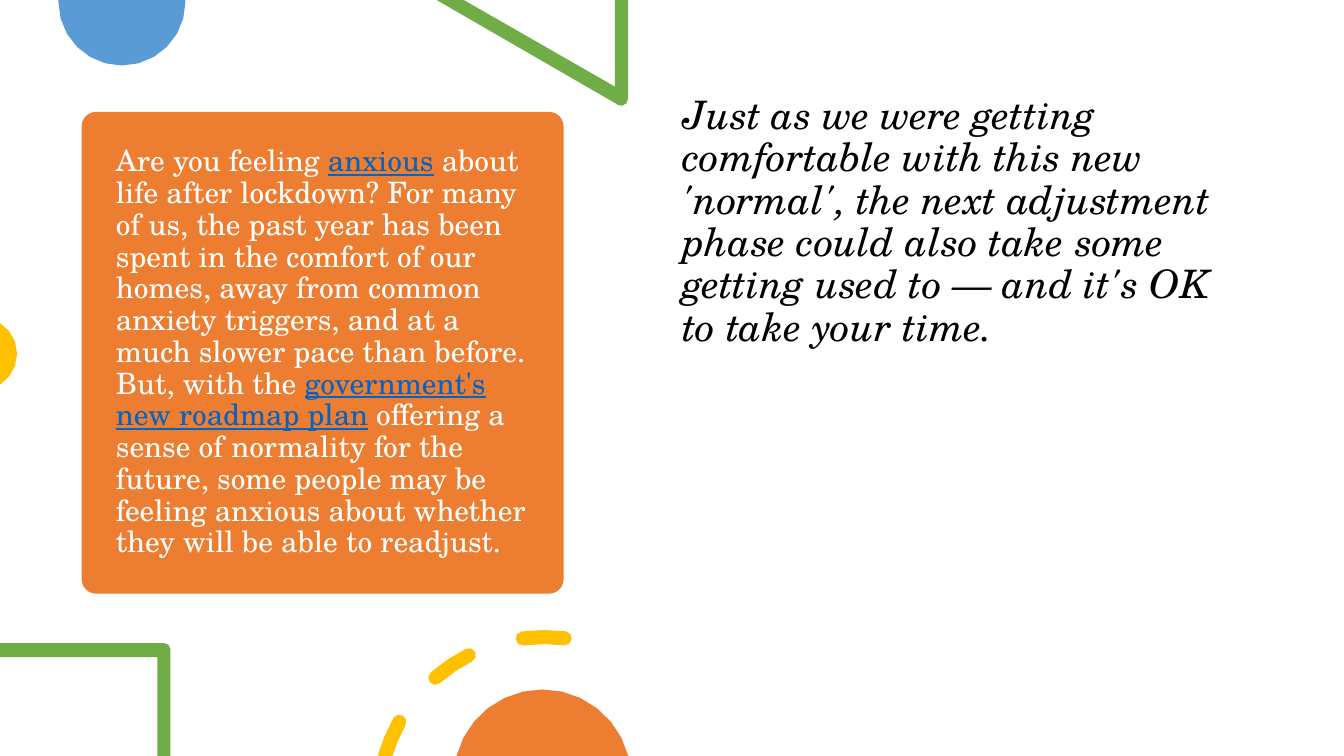
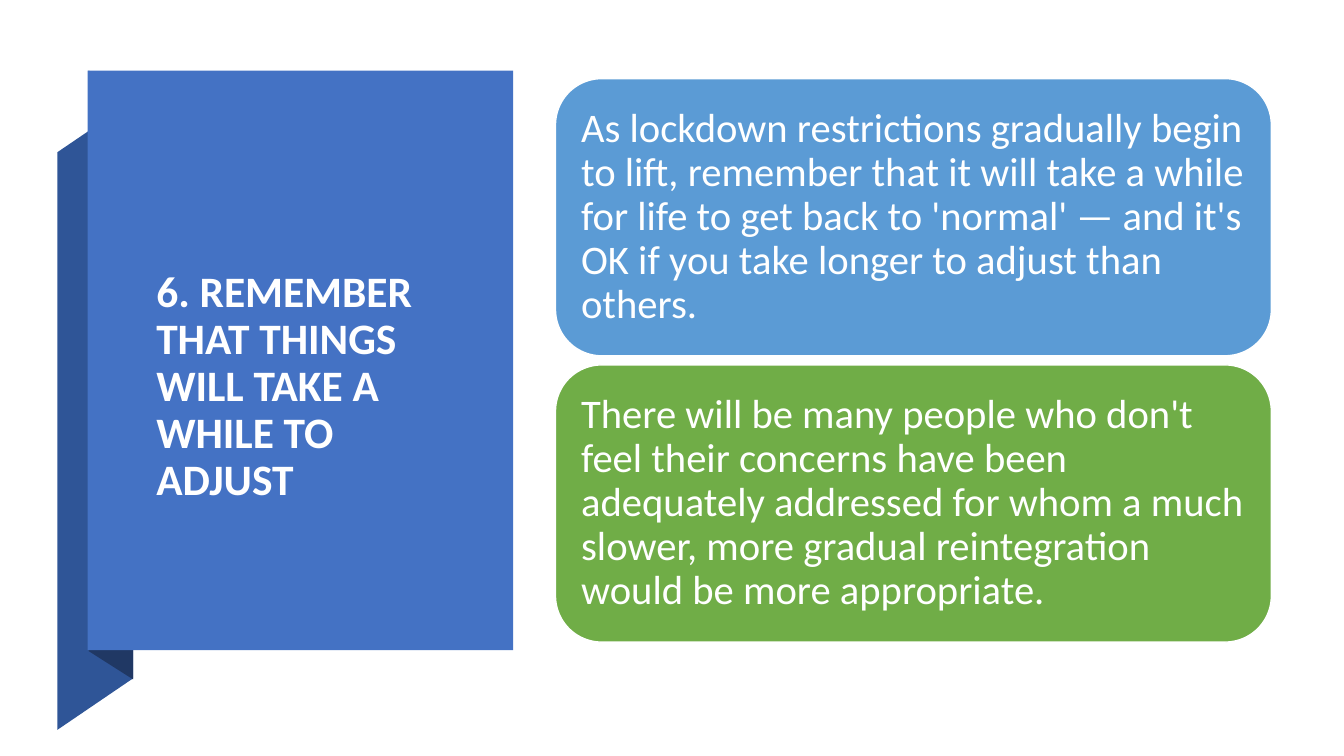
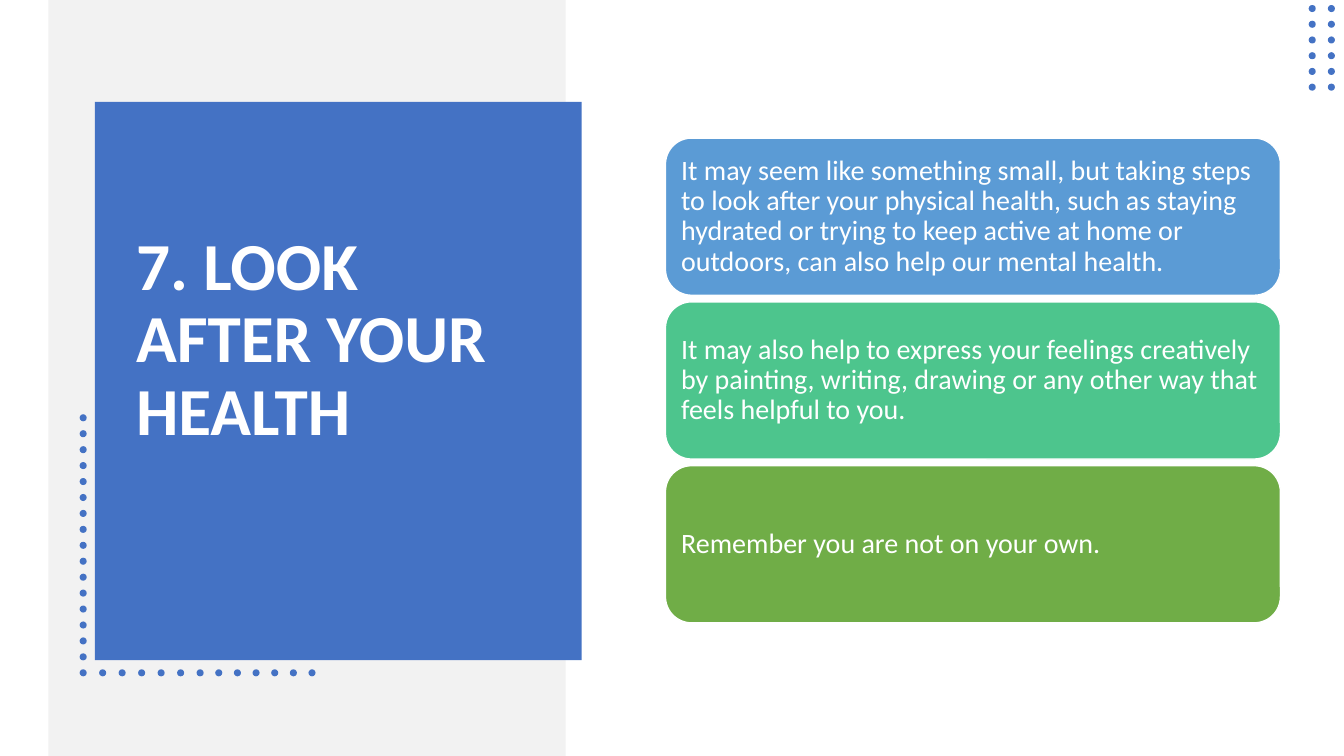
from math import acos, ceil, cos, degrees, radians, sin

from pptx import Presentation
from pptx.dml.color import RGBColor
from pptx.enum.shapes import MSO_SHAPE
from pptx.enum.text import MSO_ANCHOR, MSO_AUTO_SIZE, PP_ALIGN
from pptx.util import Pt

PX = 9144  # 100 px to the inch
RECTANGLE, ROUNDED, OVAL = MSO_SHAPE.RECTANGLE, MSO_SHAPE.ROUNDED_RECTANGLE, MSO_SHAPE.OVAL
TOP, MIDDLE = MSO_ANCHOR.TOP, MSO_ANCHOR.MIDDLE
LEFT, NO_AUTOFIT = PP_ALIGN.LEFT, MSO_AUTO_SIZE.NONE

WHITE = RGBColor(0xFF, 0xFF, 0xFF)
BLACK = RGBColor(0x00, 0x00, 0x00)
GREY = RGBColor(0xF2, 0xF2, 0xF2)
BLUE = RGBColor(0x44, 0x72, 0xC4)
FOLD_BLUE = RGBColor(0x2F, 0x55, 0x97)
NAVY = RGBColor(0x20, 0x38, 0x64)
SKY = RGBColor(0x5B, 0x9B, 0xD5)
LINK_BLUE = RGBColor(0x05, 0x63, 0xC1)
ORANGE = RGBColor(0xED, 0x7D, 0x31)
GOLD = RGBColor(0xFF, 0xC0, 0x00)
GREEN = RGBColor(0x70, 0xAD, 0x47)
MINT = RGBColor(0x4D, 0xC5, 0x8D)
SANS, SERIF = "Calibri", "TeX Gyre Schola"


def write(box, *spans, size, font=SANS, colour=WHITE, bold=False, italic=False,
          anchor=MIDDLE, margins=(10, 5, 10, 5)):
    """Fill box with one paragraph; every second span looks like a link."""
    frame = box.text_frame
    frame.word_wrap = True
    frame.auto_size = NO_AUTOFIT
    frame.vertical_anchor = anchor
    (frame.margin_left, frame.margin_top,
     frame.margin_right, frame.margin_bottom) = (m * PX for m in margins)
    para = frame.paragraphs[0]
    para.alignment = LEFT
    para.line_spacing = 0.9
    for index, text in enumerate(spans):
        linked = index % 2 == 1
        span = para.add_run()
        span.text = text
        span.font.name = font
        span.font.size = Pt(size)
        span.font.bold = bold
        span.font.italic = italic
        span.font.underline = linked
        span.font.color.rgb = LINK_BLUE if linked else colour


def style(shape, fill, line=None):
    shape.shadow.inherit = False
    shape.fill.solid()
    shape.fill.fore_color.rgb = fill
    if line is None:
        shape.line.fill.background()
    else:
        shape.line.color.rgb = line
        shape.line.width = Pt(1)
    return shape


deck = Presentation()
deck.slide_width, deck.slide_height = 1333 * PX, 750 * PX
title_only = deck.slide_layouts[5]
intro, adjust, health = (deck.slides.add_slide(title_only) for _ in range(3))

# Dashes of a ring: band between two arcs, closed by round caps
ring_x, ring_y, ring_radius, half_width = 540, 797, 165, 7
inner, outer = ring_radius - half_width, ring_radius + half_width
dashes = [[(ring_x, ring_y, outer, 196, 209),
           (396, 716, half_width, 209, 389),
           (ring_x, ring_y, inner, 209, 197)]]
for start, end in ((229, 243), (262.5, 277)):
    start_cap, end_cap = (
        (ring_x + ring_radius * cos(radians(angle)),
         ring_y + ring_radius * sin(radians(angle)),
         half_width, angle + turn, angle + turn + 180)
        for angle, turn in ((start, 180), (end, 0)))
    dashes.append([(ring_x, ring_y, outer, start, end), end_cap,
                   (ring_x, ring_y, inner, end, start), start_cap])

# A piece is a corner (x, y) or an arc (centre x, centre y, radius, start, end)
outlines = [
    (intro, SKY, [[(121, 2, 63, 0, 180), (58, 0), (184, 0)]]),
    (intro, GREEN, [[(623, 0), (610, 0), (610, 86), (460, 0), (433, 0), (613, 104),
                     (616, 98, 7, 120, 0)]]),
    (intro, GOLD, [[(-19, 351, 36, -58, 58)]]),
    (intro, GREEN, [[(0, 638), (0, 652), (156, 652), (156, 750), (169, 750),
                     (163, 644, 6, 0, -90)]]),
    (intro, GOLD, dashes),
    (intro, ORANGE, [[(538, 772, 88, 194.5, 345.5)]]),
    (adjust, FOLD_BLUE, [[(57, 724), (132, 673), (132, 100), (57, 151)]]),
    (adjust, NAVY, [[(88, 646), (132, 674), (132, 99), (88, 70)]]),
]
TOLERANCE = 0.6  # px between an arc and its chords
for page, fill, contours in outlines:
    builder = None
    for contour in contours:
        points = []
        for piece in contour:
            if len(piece) == 2:
                points.append((piece[0] * PX, piece[1] * PX))
                continue
            x, y, radius, start, end = piece
            steps = ceil(abs(end - start) / degrees(2 * acos(1 - TOLERANCE / radius)))
            for step in range(steps + 1):
                angle = radians(start + (end - start) * step / steps)
                points.append(((x + radius * cos(angle)) * PX,
                               (y + radius * sin(angle)) * PX))
        if builder is None:
            builder = page.shapes.build_freeform(*points[0], scale=1.0)
        else:
            builder.move_to(*points[0])
        builder.add_line_segments(points[1:], close=True)
    style(builder.convert_to_shape(), fill)

# Panels behind the titles
panels = [
    (intro, ROUNDED, (81, 111, 478, 478), ORANGE),
    (adjust, RECTANGLE, (87, 70, 422, 575), BLUE),
    (health, RECTANGLE, (48, 0, 513, 750), GREY),
    (health, RECTANGLE, (94, 101, 483, 554), BLUE),
]
for page, kind, place, fill in panels:
    panel = style(page.shapes.add_shape(kind, *(n * PX for n in place)), fill)
    if kind == ROUNDED:
        panel.adjustments[0] = 0.03

# Dotted block at the top right, dotted corner at the bottom left
dots = [(x, 5 + 78 * row / 5) for x in (1298, 1317) for row in range(6)]
dots += [(79, 411 + 253 * row / 16) for row in range(17)]
dots += [(79 + 116 * column / 6, 664) for column in range(1, 7)]
dots += [(195 + 111 * column / 6, 664) for column in range(1, 7)]
for x, y in dots:
    style(health.shapes.add_shape(OVAL, round(x * PX), round(y * PX), 7 * PX, 7 * PX), BLUE)

# Titles
titles = [
    (intro, (105, 122, 431, 456), dict(size=21, font=SERIF), [
        "Are you feeling ",
        "anxious",
        " about life after lockdown? For many of us, the past year has been spent in the "
        "comfort of our homes, away from common anxiety triggers, and at a much slower pace "
        "than before. But, with the ",
        "government's new roadmap plan",
        " offering a sense of normality for the future, some people may be feeling anxious "
        "about whether they will be able to readjust."]),
    (adjust, (145, 167, 301, 394), dict(size=31, bold=True, margins=(10, 46, 10, 5)),
     ["6. REMEMBER THAT THINGS WILL TAKE A WHILE TO ADJUST"]),
    (health, (125, 145, 414, 468), dict(size=48, bold=True, margins=(10, 5, 10, 86)),
     ["7. LOOK AFTER YOUR HEALTH"]),
]
for page, place, look, spans in titles:
    title = page.shapes.title
    title.left, title.top, title.width, title.height = (n * PX for n in place)
    write(title, *spans, **look)
    page.shapes.element.append(title.element)  # in front of its panel

quote = intro.shapes.add_textbox(667 * PX, 90 * PX, 575 * PX, 535 * PX)
write(quote,
      "Just as we were getting comfortable with this new 'normal', the next adjustment phase "
      "could also take some getting used to — and it's OK to take your time.",
      size=28, font=SERIF, colour=BLACK, italic=True, anchor=TOP)

# Stacks of cards, spread evenly from the first top to the last top
stacks = [
    (adjust, (551, 78, 710, 275), 362, 29, (12, 11, 11, 11), [
        (SKY, "As lockdown restrictions gradually begin to lift, remember that it will take a "
              "while for life to get back to 'normal' — and it's OK if you take longer to "
              "adjust than others."),
        (GREEN, "There will be many people who don't feel their concerns have been adequately "
                "addressed for whom a much slower, more gradual reintegration would be more "
                "appropriate.")]),
    (health, (660, 137, 610, 156), 462, 20, (8, 8, 8, 8), [
        (SKY, "It may seem like something small, but taking steps to look after your physical "
              "health, such as staying hydrated or trying to keep active at home or outdoors, "
              "can also help our mental health."),
        (MINT, "It may also help to express your feelings creatively by painting, writing, "
               "drawing or any other way that feels helpful to you."),
        (GREEN, "Remember you are not on your own.")]),
]
for page, (left, top, width, height), last_top, size, margins, cards in stacks:
    pitch = (last_top - top) / (len(cards) - 1)
    for row, (fill, text) in enumerate(cards):
        card = page.shapes.add_shape(ROUNDED, left * PX, round((top + row * pitch) * PX),
                                     width * PX, height * PX)
        style(card, fill, line=WHITE)
        write(card, text, size=size, margins=margins)

deck.save("out.pptx")
